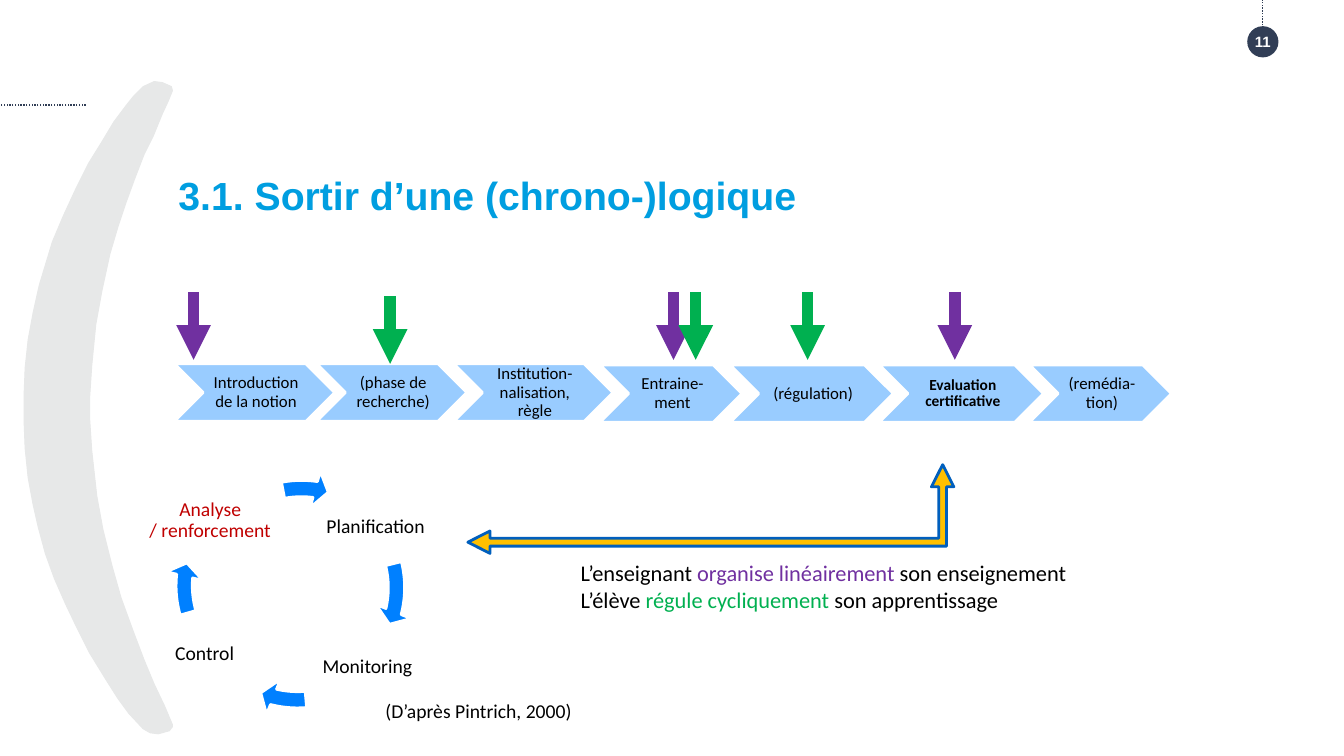
from lxml import etree
from pptx import Presentation
from pptx import util as u
from pptx.dml.color import RGBColor
from pptx.enum import dml, shapes, text
from pptx.oxml import ns

CELL = u.Inches(0.1)  # one column or row of the grid
WHITE, BLACK, NAVY, GREY = "FFFFFF", "000000", "313E56", "E7E8E8"
PURPLE, GREEN, RED, TITLE = "7030A0", "00B050", "C00000", "009EE0"
STEP, CYCLE, GOLD, EDGE = "99CCFF", "0080FF", "FFC000", "005FBD"
MST, ALIGN, ANCHOR = shapes.MSO_SHAPE, text.PP_ALIGN, text.MSO_ANCHOR


def rgb(value):
    return RGBColor.from_string(value)


def grid(*cells):
    return [round(c * CELL) for c in cells]


def write(tf, content, size=14, color=BLACK, font="Calibri", bold=False,
          align=ALIGN.LEFT, anchor=ANCHOR.TOP, spacing=None, insets=None):
    """Fill a frame; content is text, or lines made of (text, colour) runs."""
    tf.word_wrap = True
    tf.vertical_anchor = anchor
    if insets:
        tf.margin_left, tf.margin_top, tf.margin_right, tf.margin_bottom = grid(*insets)
    if isinstance(content, str):
        content = [[(line, color)] for line in content.split("\n")]
    for i, runs in enumerate(content):
        p = tf.add_paragraph() if i else tf.paragraphs[0]
        p.alignment = align
        if spacing:
            p.line_spacing = spacing
        for words, run_color in runs:
            r = p.add_run()
            r.text = words
            r.font.size, r.font.name, r.font.bold = u.Pt(size), font, bold
            r.font.color.rgb = rgb(run_color)


class Canvas:
    centred = dict(align=ALIGN.CENTER, anchor=ANCHOR.MIDDLE, spacing=0.9)

    def __init__(self, slide):
        self.s = slide

    def paint(self, sp, fill, line=None, width=2):
        sp.shadow.inherit = False
        sp.fill.solid()
        sp.fill.fore_color.rgb = rgb(fill)
        if line:
            sp.line.color.rgb = rgb(line)
            sp.line.width = u.Pt(width)
        else:
            sp.line.fill.background()
        return sp

    def shape(self, kind, box, fill, line=None, adj=()):
        sp = self.s.shapes.add_shape(kind, *grid(*box))
        for i, value in enumerate(adj):
            sp.adjustments[i] = value
        return self.paint(sp, fill, line)

    def outline(self, points, color):
        start, *rest = [grid(*pt) for pt in points]
        fb = self.s.shapes.build_freeform(*start)
        fb.add_line_segments(rest, close=True)
        self.paint(fb.convert_to_shape(), color, color, 0.75)

    def text(self, box, content, **fmt):
        write(self.s.shapes.add_textbox(*grid(*box)).text_frame, content, **fmt)

    def label(self, box, words, color=BLACK):
        self.text(box, words, color=color, insets=[0.2] * 4, **self.centred)

    def line(self, ends, color, width, dash=None, arrow=False):
        c = self.s.shapes.add_connector(shapes.MSO_CONNECTOR.STRAIGHT, *grid(*ends))
        c.line.color.rgb = rgb(color)
        c.line.width = u.Pt(width)
        if dash:
            c.line.dash_style = dash
        if arrow:
            etree.SubElement(c.line._ln, ns.qn("a:tailEnd"), type="triangle")
        etree.SubElement(c._element.spPr, ns.qn("a:effectLst"))

    def step(self, left, top, width, words, **fmt):
        sp = self.shape(MST.CHEVRON, (left, top, width, 5.7), STEP, WHITE)
        write(sp.text_frame, words, insets=(0.5, 0.2, 0.2, 0.2),
              **{"size": 12, **self.centred, **fmt})

    def cycle_arrow(self, left, top, end, start):
        self.shape(MST.CIRCULAR_ARROW, (left, top, 23.4, 23.4), CYCLE, WHITE,
                   (0.069, 4.649, end, start, 0.08))


def main():
    prs = Presentation()
    prs.slide_width, prs.slide_height = u.Inches(13.33), u.Inches(7.5)
    c = Canvas(prs.slides.add_slide(prs.slide_layouts[6]))

    # Large grey parenthesis: outer edge downwards, inner edge upwards
    outer = [(17.1, 9), (17, 8.6), (16.1, 8.2), (15.3, 8.1), (14.2, 8.6), (13.3, 9.5),
             (12.5, 10.5), (11.3, 12.1), (10.1, 14.1), (8.8, 16.2), (7.5, 18.8),
             (6.3, 21.4), (5.2, 24), (3.9, 28.3), (3.3, 31), (2.8, 33.7), (2.5, 36.5),
             (2.4, 39), (2.4, 42), (2.5, 44.5), (2.8, 47.4), (3.3, 50.1), (3.8, 52.3),
             (4.5, 54.9), (5.4, 57.4), (6.5, 59.9), (7.5, 62), (8.9, 64.8), (10.5, 67.4),
             (11.7, 69.3), (12.8, 70.8), (14.2, 72.3), (14.9, 72.7), (15.7, 72.8),
             (16.8, 72.5), (17.1, 72.1)]
    inner = [(17.1, 71.9), (16.3, 70), (15.3, 67.9), (14.3, 65.5), (13.2, 62.6),
             (12, 59.3), (11.1, 56.1), (10.2, 52.5), (9.6, 49.2), (9.1, 44.7),
             (8.9, 41.7), (8.9, 39.3), (9.1, 36.3), (9.5, 32.2), (10.1, 28.9),
             (10.9, 25.2), (11.7, 22.5), (12.5, 20.1), (13.3, 17.9), (14.3, 15.3),
             (15.2, 13.5), (16.1, 11.3), (16.7, 10)]
    c.outline(outer + inner, GREY)

    # Page number and dotted guides
    badge = c.shape(MST.OVAL, (123.7, 2.6, 3.1, 3.1), NAVY)
    write(badge.text_frame, "11", size=10.7, color=WHITE, font="Arial", bold=True,
          align=ALIGN.CENTER, anchor=ANCHOR.MIDDLE, insets=[0] * 4)
    for ends in ((125.2, 2.8, 125.2, 0), (8.5, 10.4, 0, 10.4)):
        c.line(ends, NAVY, 1, dash=dml.MSO_LINE.ROUND_DOT)

    # Title
    c.text((17.7, 17, 108.9, 7.1), "3.1. Sortir d’une (chrono-)logique", size=28,
           color=TITLE, font="Arial", bold=True, insets=[0] * 4)

    # Self-regulation cycle
    c.label((31.7, 48.7, 11.1, 7.1), "Planification")
    c.label((30.6, 62, 11.7, 8.3), "Monitoring")
    c.label((14.5, 60.8, 11.6, 8.3), "Control")
    c.label((13.7, 47.5, 14.3, 8.3), "Analyse\n/ renforcement", RED)
    for arrow in ((17.8, 46.6, 8.386, 207.573), (17.8, 47.9, 62.362, 51.04),
                  (16.4, 46.4, 111.307, 98.418), (18.2, 46.6, 166.788, 155.572)):
        c.cycle_arrow(*arrow)

    # Link between cycle and sequence, with its comment
    c.shape(MST.LEFT_UP_ARROW, (46.4, 46.1, 48.2, 8.8), GOLD, EDGE, (0.089, 0.126, 0.25))
    c.text((56.6, 55, 59.4, 6.4), [
        [("L’enseignant ", BLACK), ("organise linéairement ", PURPLE), ("son enseignement", BLACK)],
        [("L’élève ", BLACK), ("régule cycliquement ", GREEN), ("son apprentissage", BLACK)],
    ], size=16)

    # Teaching sequence
    c.step(17.3, 36.1, 15.9, "Introduction de la notion")
    c.step(31.4, 36.1, 14.9, "(phase de recherche)")
    c.step(45, 36.1, 15.8, "Institution-nalisation, règle")
    c.step(59.5, 36.2, 14.1, "Entraine-ment")
    c.step(72.4, 36.2, 16.2, "(régulation)")
    c.step(87.2, 36.2, 16.3, "Evaluation certificative", size=11, bold=True)
    c.step(102.1, 36.2, 14.1, "(remédia-tion)")

    # Assessment moments above the sequence
    for x, top, color, dash in ((80.1, 29, GREEN, None), (94.7, 29, PURPLE, None),
                                (19.2, 29, PURPLE, None),
                                (66.8, 29, PURPLE, dml.MSO_LINE.SQUARE_DOT),
                                (69, 29, GREEN, None), (38.7, 29.4, GREEN, None)):
        c.line((x, top, x, top + 6.7), color, 8.25, dash, arrow=True)

    # Reference
    c.text((35, 68.8, 22.7, 3.4), "(D’après Pintrich, 2000)", align=ALIGN.RIGHT)

    prs.save("out.pptx")


if __name__ == "__main__":
    main()
